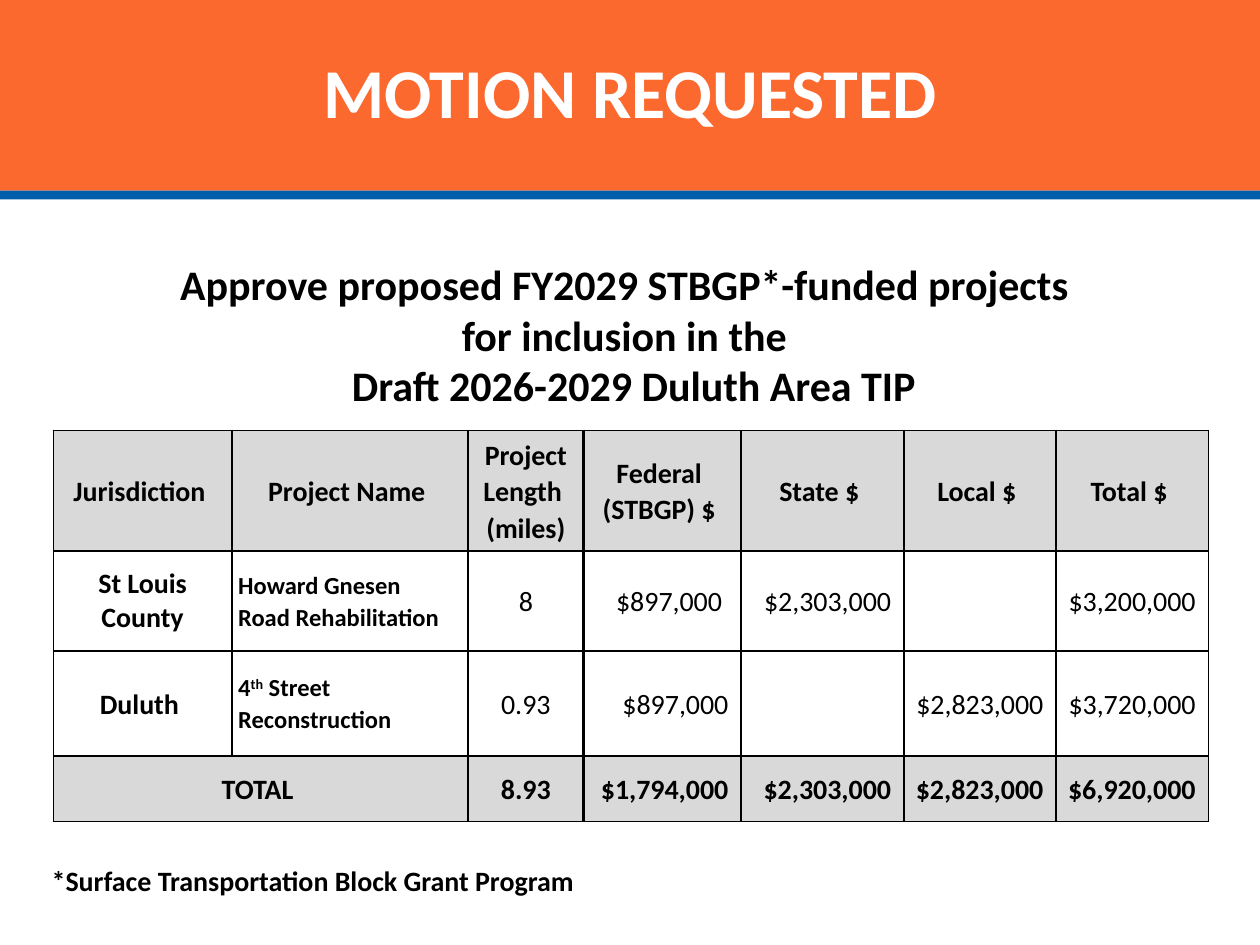
from lxml.etree import SubElement
from pptx import Presentation
from pptx.dml.color import RGBColor
from pptx.enum.shapes import MSO_SHAPE
from pptx.enum.text import MSO_ANCHOR, PP_ALIGN
from pptx.oxml.ns import qn
from pptx.util import Pt

FONT = "Calibri"
ORANGE, BLUE, GREY = "FC692E", "005DAA", "D9D9D9"
BLACK, WHITE = "000000", "FFFFFF"
COLUMN_WIDTHS = [102, 135, 66, 90, 93, 87, 87]
ROW_HEIGHTS = [69, 57, 60, 37.5]
NAME_COLUMN, LENGTH_COLUMN = 1, 2
ROWS = [
    ["Jurisdiction", "Project Name", "Project Length \v(miles)",
     "Federal (STBGP) $", "State $", "Local $", "Total $"],
    ["St Louis County", "Howard Gnesen Road Rehabilitation", "8",
     " $897,000 ", "$2,303,000", "", "$3,200,000"],
    ["Duluth", "4^th^ Street Reconstruction", "0.93",
     "$897,000", "", "$2,823,000", "$3,720,000"],
    ["TOTAL", "", "8.93", "$1,794,000", "$2,303,000", "$2,823,000", "$6,920,000"],
]


def color(value):
    """Turn a hex string into a colour."""
    return RGBColor.from_string(value)


def style(para, size, bold=True, ink=BLACK, align=PP_ALIGN.LEFT):
    """Set the font and alignment of a paragraph."""
    para.alignment = align
    para.font.name = FONT
    para.font.size = Pt(size)
    para.font.bold = bold
    para.font.color.rgb = color(ink)


def add_bar(page, left, top, width, height, fill):
    """Draw a plain filled rectangle."""
    bar = page.shapes.add_shape(
        MSO_SHAPE.RECTANGLE, Pt(left), Pt(top), Pt(width), Pt(height))
    bar.shadow.inherit = False
    bar.fill.solid()
    bar.fill.fore_color.rgb = color(fill)
    bar.line.fill.background()


def add_text(page, left, top, width, height, text, size, **options):
    """Place a wrapped text box without insets."""
    box = page.shapes.add_textbox(Pt(left), Pt(top), Pt(width), Pt(height))
    frame = box.text_frame
    frame.word_wrap = True
    frame.margin_left = frame.margin_right = frame.margin_top = frame.margin_bottom = 0
    frame.text = text
    style(frame.paragraphs[0], size, **options)


def add_banner(page, left, top, width, height):
    """Draw the title banner with its blue rule at the foot."""
    rule = 5
    add_bar(page, left, top, width, height - rule, ORANGE)
    add_bar(page, left, top + height - rule, width, rule, BLUE)
    add_text(page, left + 36, top + 27.5, width - 72, 50, "MOTION REQUESTED", 40,
             ink=WHITE, align=PP_ALIGN.CENTER)


def set_borders(cell, column):
    """Outline a cell, with a heavier line right of the length column."""
    widths = {
        "L": 1.5 if column == LENGTH_COLUMN + 1 else 1,
        "R": 1.5 if column == LENGTH_COLUMN else 1,
        "T": 1,
        "B": 1,
    }
    properties = cell._tc.get_or_add_tcPr()
    for side, width in widths.items():
        line = SubElement(properties, qn(f"a:ln{side}"), w=str(Pt(width)))
        fill = SubElement(line, qn("a:solidFill"))
        SubElement(fill, qn("a:srgbClr"), val=BLACK)


def fill_cell(cell, text, row, column):
    """Write and format one table cell."""
    header, total = row == 0, row == len(ROWS) - 1
    narrow = column == LENGTH_COLUMN
    name = column == NAME_COLUMN and not header
    amount = column > LENGTH_COLUMN and not header
    cell.vertical_anchor = MSO_ANCHOR.MIDDLE
    cell.margin_left = Pt(0.7 if narrow else 3.6)
    cell.margin_right = Pt(0.7 if narrow else 3.6 if text == "St Louis County" else 7.2)
    cell.margin_top = cell.margin_bottom = 0
    set_borders(cell, column)
    if header or total:
        cell.fill.solid()
        cell.fill.fore_color.rgb = color(GREY)
    else:
        cell.fill.background()
    para = cell.text_frame.paragraphs[0]
    if "^" in text:
        for index, part in enumerate(text.split("^")):
            span = para.add_run()
            span.text = part
            if index == 1:
                span.font._element.set("baseline", "30000")
    else:
        para.text = text
    style(para, 14 if name else 16, bold=header or total or column <= NAME_COLUMN,
          align=PP_ALIGN.LEFT if name else PP_ALIGN.RIGHT if amount else PP_ALIGN.CENTER)
    if text != "St Louis County":
        para.line_spacing = 1.07
    if header or text == "Duluth":
        para.space_after = Pt(10)


def add_project_table(page, left, top, width, height):
    """Build the table of projects and their funding."""
    table = page.shapes.add_table(
        len(ROWS), len(COLUMN_WIDTHS), Pt(left), Pt(top), Pt(width), Pt(height)).table
    table.first_row = table.horz_banding = False
    for column, column_width in zip(table.columns, COLUMN_WIDTHS):
        column.width = Pt(column_width)
    for row, row_height in zip(table.rows, ROW_HEIGHTS):
        row.height = Pt(row_height)
    for row, texts in enumerate(ROWS):
        for column, text in enumerate(texts):
            fill_cell(table.cell(row, column), text, row, column)
    last = len(ROWS) - 1
    table.cell(last, 0).merge(table.cell(last, 1))


def add_motion(page, left, top, width):
    """Place the motion, the project table and the footnote."""
    add_text(page, left, top, width, 88,
             "Approve proposed FY2029 STBGP*-funded projects \v"
             "for inclusion in the \v Draft 2026-2029 Duluth Area TIP",
             24, align=PP_ALIGN.CENTER)
    add_project_table(page, left + 1, top + 98, sum(COLUMN_WIDTHS), sum(ROW_HEIGHTS))
    add_text(page, left, top + 345.5, width, 20,
             "*Surface Transportation Block Grant Program", 16)


def main():
    """Build and save the deck."""
    deck = Presentation()
    deck.slide_width, deck.slide_height = Pt(720), Pt(540)
    page = deck.slides.add_slide(deck.slide_layouts[6])
    add_banner(page, 0, 0, 720, 114)
    add_motion(page, 29.5, 148, 660)
    deck.save("out.pptx")


if __name__ == "__main__":
    main()
